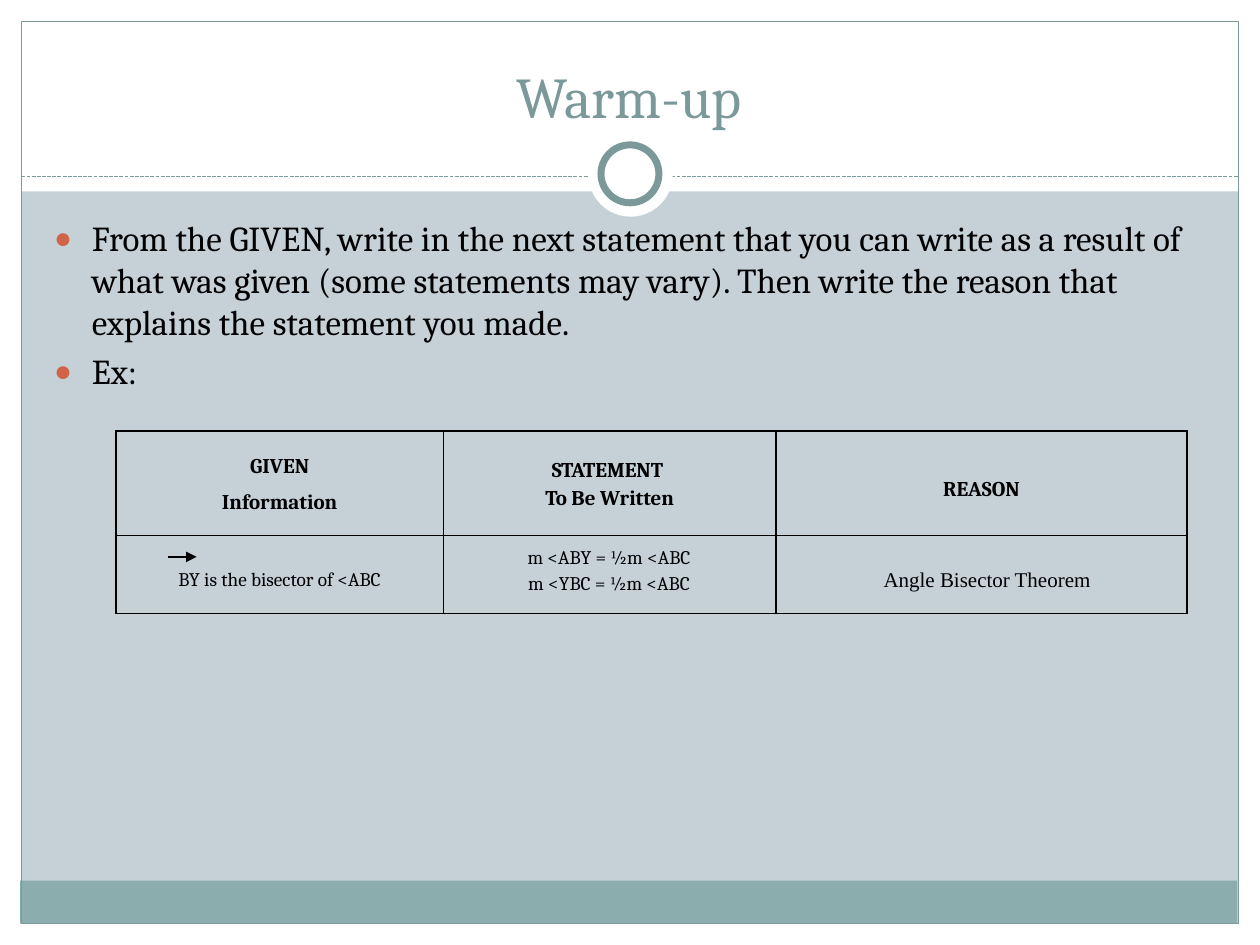
from lxml import etree
from pptx import Presentation
from pptx.dml.color import RGBColor
from pptx.enum import dml, shapes, text
from pptx.oxml import parse_xml
from pptx.oxml.ns import nsdecls, qn
from pptx.util import Inches, Pt

BACKGROUND = RGBColor(0xC5, 0xD1, 0xD7)
WHITE = RGBColor(0xFF, 0xFF, 0xFF)
BLACK = RGBColor(0, 0, 0)
TEAL = RGBColor(0x7C, 0x99, 0x9A)
FOOTER = RGBColor(0x8C, 0xAD, 0xAE)
BULLET = RGBColor(0xD1, 0x63, 0x49)


def format_paragraph(paragraph, size, color=BLACK, font="Cambria", bold=False,
                     align=text.PP_ALIGN.CENTER, spacing=None):
    paragraph.alignment = align
    paragraph.line_spacing = spacing
    paragraph.font.size = Pt(size)
    paragraph.font.name = font
    paragraph.font.bold = bold
    paragraph.font.color.rgb = color


def add_line(start, end, color):
    line = slide.shapes.add_connector(
        shapes.MSO_CONNECTOR.STRAIGHT, *map(Inches, start + end))
    line.line.color.rgb = color
    line.line.width = Pt(0.75)
    etree.SubElement(line.element.spPr, qn("a:effectLst"))
    return line


presentation = Presentation()
presentation.slide_width, presentation.slide_height = Inches(10), Inches(7.5)
slide = presentation.slides.add_slide(presentation.slide_layouts[1])
slide.background.fill.solid()
slide.background.fill.fore_color.rgb = BACKGROUND

# Frame: white margins, footer band, outline, dashed rule and ring
RECTANGLE, OVAL = shapes.MSO_SHAPE.RECTANGLE, shapes.MSO_SHAPE.OVAL
for kind, box, fill, outline in [
    (RECTANGLE, (0, 7.33, 10, 0.17), WHITE, None),
    (RECTANGLE, (0, 0, 10, 1.52), WHITE, None),
    (RECTANGLE, (0, 0, 0.17, 7.5), WHITE, None),
    (RECTANGLE, (9.83, 0, 0.17, 7.5), WHITE, None),
    (RECTANGLE, (0.16, 6.99, 9.66, 0.34), FOOTER, None),
    (RECTANGLE, (0.17, 0.17, 9.66, 7.16), None, 0.75),
    (OVAL, (4.67, 1.05, 0.67, 0.67), WHITE, None),
    (OVAL, (4.77, 1.15, 0.46, 0.46), WHITE, 4),
]:
    if box[0] == 4.67:
        rule = add_line((0.17, 1.4), (9.83, 1.4), TEAL)
        rule.line.dash_style = dml.MSO_LINE.SQUARE_DOT
    shape = slide.shapes.add_shape(kind, *map(Inches, box))
    shape.shadow.inherit = False
    if fill is None:
        shape.fill.background()
    else:
        shape.fill.solid()
        shape.fill.fore_color.rgb = fill
    if outline is None:
        shape.line.fill.background()
    else:
        shape.line.color.rgb = TEAL
        shape.line.width = Pt(outline)

# Title and bullet list, brought in front of the frame
title, body = slide.shapes.title, slide.placeholders[1]
for placeholder, box in [(title, (0.33, 0.25, 9.33, 0.83)),
                         (body, (0.33, 1.67, 9.3, 5))]:
    placeholder.left, placeholder.top, placeholder.width, placeholder.height = map(Inches, box)
    placeholder.element.getparent().append(placeholder.element)

title.text_frame.text = "Warm-up"
title.text_frame.vertical_anchor = text.MSO_ANCHOR.BOTTOM
format_paragraph(title.text_frame.paragraphs[0], 33, TEAL)

body.text_frame.text = (
    "From the GIVEN, write in the next statement that you can write as a result of "
    "what was given (some statements may vary). Then write the reason that explains "
    "the statement you made.\nEx:")
for paragraph in body.text_frame.paragraphs:
    format_paragraph(paragraph, 20, align=text.PP_ALIGN.LEFT)
    paragraph.space_before = Pt(4)
    properties = paragraph._p.get_or_add_pPr()
    properties.set("marL", str(Inches(0.3)))
    properties.set("indent", str(Inches(-0.3)))
    for bullet in (f'<a:buClr {nsdecls("a")}><a:srgbClr val="{BULLET}"/></a:buClr>',
                   f'<a:buSzPct {nsdecls("a")} val="85000"/>',
                   f'<a:buChar {nsdecls("a")} char="●"/>'):
        properties.insert_element_before(parse_xml(bullet), "a:tabLst", "a:defRPr", "a:extLst")

# Proof table: (text, line spacing) for each paragraph in a cell
ROWS = [
    [[("GIVEN", 1.15), ("Information", 1.5)],
     [("STATEMENT ", 1.15), ("To Be Written", 1.15)],
     [("REASON", 1.5)]],
    [[("BY is the bisector of <ABC", 1.5)], [], []],
]
table = slide.shapes.add_table(
    2, 3, Inches(0.92), Inches(3.42), Inches(8.5), Inches(1.45)).table
table.first_row = table.horz_banding = False
for column, width in zip(table.columns, (2.6, 2.64, 3.26)):
    column.width = Inches(width)
for row, height in zip(table.rows, (0.83, 0.62)):
    row.height = Inches(height)

for row_index, row in enumerate(ROWS):
    for column_index, lines in enumerate(row):
        cell = table.cell(row_index, column_index)
        cell.margin_left = cell.margin_right = Inches(0.07)
        cell.margin_top = cell.margin_bottom = 0
        cell.vertical_anchor = text.MSO_ANCHOR.MIDDLE
        cell_properties = cell._tc.get_or_add_tcPr()
        for side in ("lnL", "lnR", "lnT", "lnB"):
            cell_properties.append(parse_xml(
                f'<a:{side} {nsdecls("a")} w="{Pt(1)}"><a:solidFill>'
                f'<a:srgbClr val="{BLACK}"/></a:solidFill></a:{side}>'))
        cell.fill.background()
        cell.text_frame.text = "\n".join(line for line, _ in lines)
        for paragraph, (_, spacing) in zip(cell.text_frame.paragraphs, lines):
            header = row_index == 0
            format_paragraph(paragraph, 12 if header else 11, bold=header, spacing=spacing)
            if not header:
                paragraph.space_before = paragraph.space_after = Pt(6)

# Ray arrow above "BY"
ray = add_line((1.33, 4.42), (1.56, 4.42), BLACK)
etree.SubElement(ray.line._get_or_add_ln(), qn("a:tailEnd"), type="triangle")

# Answers laid over the second row
for box, answer, size, font in [
    ((3.67, 4.25, 2.33, 0.51), "m <ABY = ½m <ABC\nm <YBC = ½m <ABC", 11, "Cambria"),
    ((6.67, 4.42, 2.33, 0.31), "Angle Bisector Theorem", 12, "Times New Roman"),
]:
    frame = slide.shapes.add_textbox(*map(Inches, box)).text_frame
    frame.word_wrap = True
    frame.auto_size = text.MSO_AUTO_SIZE.SHAPE_TO_FIT_TEXT
    frame.text = answer
    for paragraph in frame.paragraphs:
        format_paragraph(paragraph, size, font=font, spacing=1.15)
    frame.paragraphs[0].space_before = Pt(2)

presentation.save("out.pptx")
